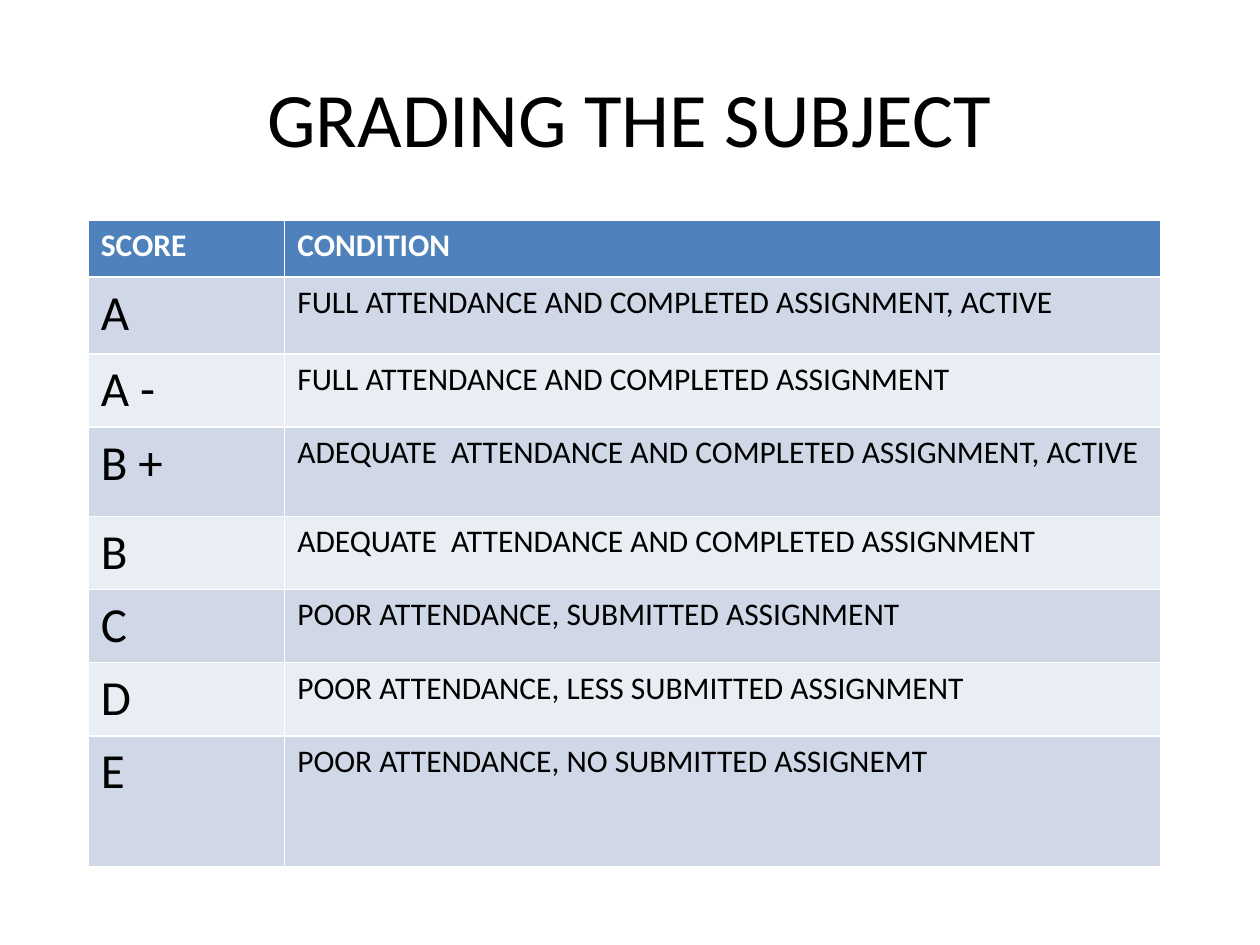
from pptx import Presentation
from pptx.dml.color import RGBColor
from pptx.enum import text
from pptx.util import Inches, Pt

BLACK = RGBColor(0x00, 0x00, 0x00)
WHITE = RGBColor(0xFF, 0xFF, 0xFF)
HEADER_BLUE = RGBColor(0x4F, 0x81, 0xBD)
BAND_DARK = RGBColor(0xD0, 0xD8, 0xE8)
BAND_LIGHT = RGBColor(0xE9, 0xED, 0xF4)

FONT = "Calibri"
COLUMN_WIDTHS = (1.56, 6.95)
ROW_HEIGHTS = (0.45, 0.61, 0.58, 0.71, 0.58, 0.58, 0.58, 1.04)
GRADES = (
    ("SCORE", "CONDITION"),
    ("A", "FULL ATTENDANCE AND COMPLETED ASSIGNMENT, ACTIVE"),
    ("A -", "FULL ATTENDANCE AND COMPLETED ASSIGNMENT"),
    ("B +", "ADEQUATE  ATTENDANCE AND COMPLETED ASSIGNMENT, ACTIVE"),
    ("B", "ADEQUATE  ATTENDANCE AND COMPLETED ASSIGNMENT"),
    ("C", "POOR ATTENDANCE, SUBMITTED ASSIGNMENT"),
    ("D", "POOR ATTENDANCE, LESS SUBMITTED ASSIGNMENT"),
    ("E", "POOR ATTENDANCE, NO SUBMITTED ASSIGNEMT"),
)


def write_text(text_frame, wording, color, **font_format):
    paragraph = text_frame.paragraphs[0]
    run = paragraph.add_run()
    run.text = wording
    run.font.color.rgb = color
    for name, value in {"name": FONT, **font_format}.items():
        setattr(run.font, name, value)
    return paragraph


def set_title(slide, wording):
    title = slide.shapes.title
    box = {"left": 0.5, "top": 0.3, "width": 9, "height": 1.25}
    for name, value in box.items():
        setattr(title, name, Inches(value))
    title.text_frame.vertical_anchor = text.MSO_ANCHOR.MIDDLE
    paragraph = write_text(title.text_frame, wording, BLACK, size=Pt(44))
    paragraph.alignment = text.PP_ALIGN.CENTER


def fill_cell(cell, wording, row, column):
    """Style the header row, the alternating bands and the large score letters."""
    is_header = row == 0
    is_score = column == 0 and not is_header
    cell.fill.solid()
    if is_header:
        cell.fill.fore_color.rgb = HEADER_BLUE
    else:
        cell.fill.fore_color.rgb = BAND_DARK if row % 2 else BAND_LIGHT
    write_text(cell.text_frame, wording, WHITE if is_header else BLACK,
               size=Pt(28 if is_score else 18), bold=is_header)


def add_grade_table(slide):
    frame = slide.shapes.add_table(
        len(GRADES), len(COLUMN_WIDTHS), Inches(0.7), Inches(1.75),
        Inches(sum(COLUMN_WIDTHS)), Inches(sum(ROW_HEIGHTS)))
    table = frame.table
    for column, width in zip(table.columns, COLUMN_WIDTHS):
        column.width = Inches(width)
    for row, height in zip(table.rows, ROW_HEIGHTS):
        row.height = Inches(height)
    for row, wordings in enumerate(GRADES):
        for column, wording in enumerate(wordings):
            fill_cell(table.cell(row, column), wording, row, column)


def main():
    presentation = Presentation()
    presentation.slide_width = Inches(10)
    presentation.slide_height = Inches(7.5)
    slide = presentation.slides.add_slide(presentation.slide_layouts[5])
    set_title(slide, "GRADING THE SUBJECT")
    add_grade_table(slide)
    presentation.save("out.pptx")


if __name__ == "__main__":
    main()
